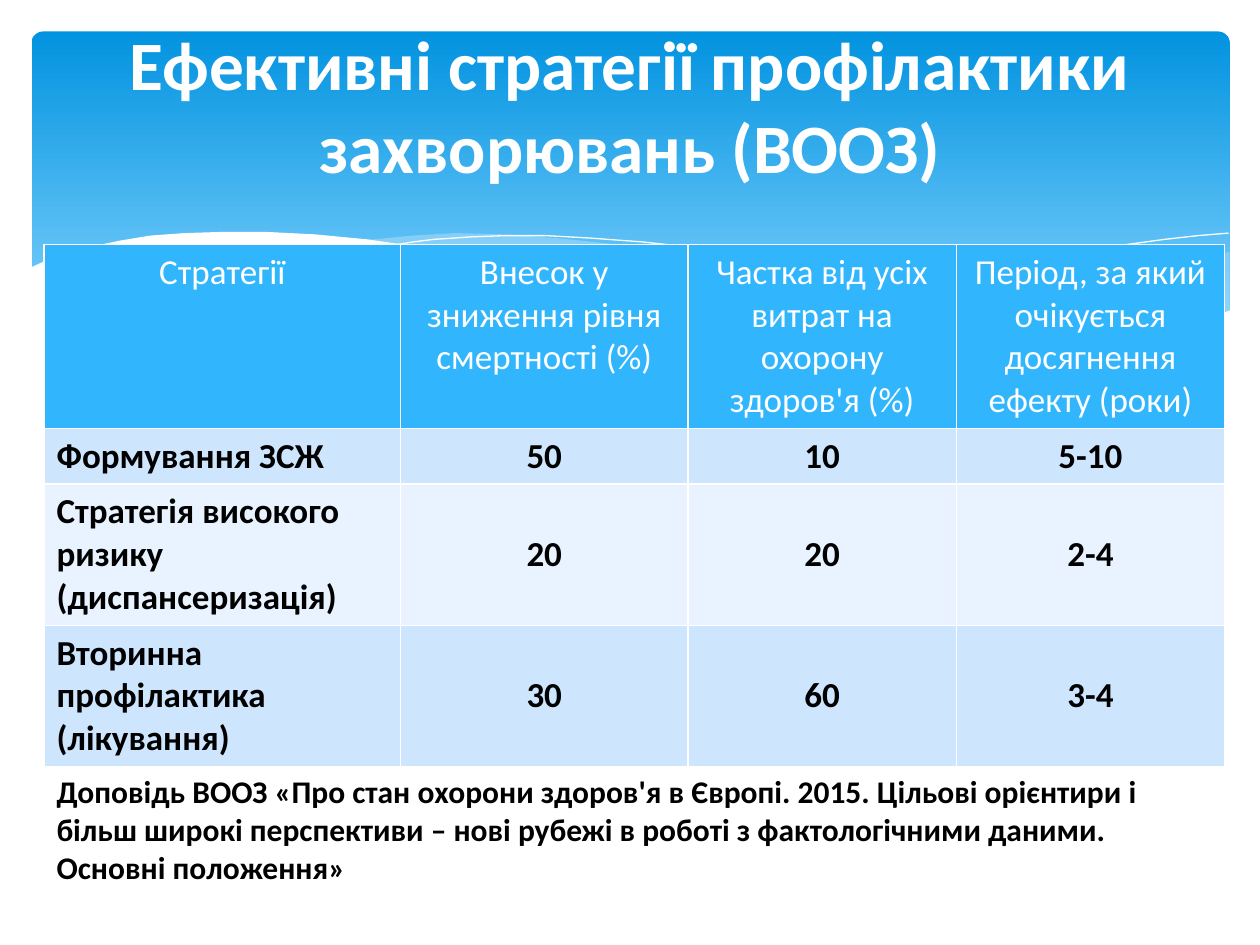
"""Build a slide with a table of disease prevention strategies."""
from dataclasses import dataclass
from typing import Optional

from lxml.etree import SubElement
from pptx import Presentation
from pptx.dml.color import RGBColor
from pptx.enum.shapes import MSO_SHAPE
from pptx.enum.text import MSO_ANCHOR, MSO_AUTO_SIZE, PP_ALIGN
from pptx.oxml.ns import qn
from pptx.util import Inches, Pt

FONT = "Calibri"
WHITE = RGBColor(0xFF, 0xFF, 0xFF)
BLACK = RGBColor(0x00, 0x00, 0x00)
BANNER_TOP = RGBColor(0x02, 0x93, 0xE0)
BANNER_BOTTOM = RGBColor(0x83, 0xD3, 0xFE)
WAVE_BLUE = RGBColor(0xC6, 0xE7, 0xFC)
HEADER_BLUE = RGBColor(0x31, 0xB6, 0xFD)
BAND_DARK = RGBColor(0xCE, 0xE5, 0xFE)
BAND_LIGHT = RGBColor(0xE8, 0xF3, 0xFF)


@dataclass
class Wave:
    """A wave outline, either filled or drawn as a hairline."""
    points: list[tuple[float, float]]
    fill: Optional[RGBColor] = None
    alpha: int = 100


@dataclass
class Row:
    """A table row with its height, band colour and cell texts."""
    height: float
    fill: RGBColor
    texts: tuple[str, ...]


WAVES = [
    Wave([(9.76, 2), (9.62, 2.02), (9.35, 2.07), (9.06, 2.13), (8.61, 2.23),
          (8.05, 2.37), (7.53, 2.48), (7.06, 2.57), (6.61, 2.65), (6.91, 2.69),
          (7.19, 2.72), (7.45, 2.75), (7.69, 2.77), (8.03, 2.78), (8.35, 2.77),
          (8.63, 2.75), (8.89, 2.72), (9.13, 2.67), (9.35, 2.62), (9.49, 2.57),
          (9.76, 2.47)], WAVE_BLUE, 29),
    Wave([(8.93, 2.73), (8.66, 2.69), (8.07, 2.6), (7.41, 2.47), (6.68, 2.31),
          (6.29, 2.22), (5.98, 2.14), (5.69, 2.08), (5.41, 2.03), (5.14, 1.98),
          (4.89, 1.94), (4.42, 1.89), (3.99, 1.86), (3.61, 1.85), (3.28, 1.87),
          (2.86, 1.91), (3.23, 1.96), (3.62, 2.03), (4.04, 2.11), (4.49, 2.22),
          (5.3, 2.4), (5.84, 2.52), (6.34, 2.61), (6.8, 2.68), (7.22, 2.74),
          (7.61, 2.77), (7.96, 2.78), (8.28, 2.78), (8.57, 2.77), (8.76, 2.75)],
         WAVE_BLUE, 40),
    Wave([(3.09, 1.95), (3.28, 1.92), (3.44, 1.9), (3.74, 1.88), (4.01, 1.87),
          (4.33, 1.87), (4.69, 1.89), (5.1, 1.92), (5.56, 1.97), (6.08, 2.04),
          (6.65, 2.13), (7.27, 2.26), (7.95, 2.41), (8.69, 2.61), (9.07, 2.72)]),
    Wave([(6.13, 2.57), (6.53, 2.46), (6.95, 2.35), (7.48, 2.23), (8.06, 2.1),
          (8.66, 1.99), (8.95, 1.94), (9.24, 1.9), (9.51, 1.87), (9.75, 1.85)]),
    Wave([(9.77, 2.46), (9.59, 2.53), (9.4, 2.59), (9.2, 2.65), (8.99, 2.69),
          (8.75, 2.73), (8.5, 2.75), (8.23, 2.77), (7.93, 2.76), (7.61, 2.75),
          (7.26, 2.72), (6.88, 2.68), (6.48, 2.62), (6.03, 2.54), (5.55, 2.45),
          (5.03, 2.33), (4.47, 2.2), (3.91, 2.07), (3.4, 1.97), (2.92, 1.9),
          (2.5, 1.86), (2.11, 1.84), (1.77, 1.84), (1.46, 1.85), (1.19, 1.87),
          (0.95, 1.91), (0.76, 1.95), (0.59, 1.99), (0.46, 2.03), (0.36, 2.07),
          (0.23, 2.13), (0.23, 3.29), (9.77, 3.29)], WHITE),
]
COLUMNS = (2.83, 2.28, 2.13, 2.13)
ROWS = [
    Row(1.46, HEADER_BLUE, ("Стратегії", "Внесок у зниження рівня смертності (%)",
                            "Частка від усіх витрат на охорону здоров'я (%)",
                            "Період, за який очікується досягнення ефекту (роки)")),
    Row(0.44, BAND_DARK, ("Формування ЗСЖ", "50", "10", "5-10")),
    Row(1.12, BAND_LIGHT, ("Стратегія високого ризику (диспансеризація)",
                           "20", "20", "2-4")),
    Row(1.12, BAND_DARK, ("Вторинна профілактика (лікування)", "30", "60", "3-4")),
]
TITLE = "Ефективні стратегії профілактики захворювань (ВООЗ)"
SOURCE = ("Доповідь ВООЗ «Про стан охорони здоров'я в Європі. 2015. Цільові орієнтири "
          "і більш широкі перспективи – нові рубежі в роботі з фактологічними даними. "
          "Основні положення»")


def write(tf, text: str, size: float, color: RGBColor, bold: bool, align) -> None:
    """Write one formatted run into the first paragraph of a text frame."""
    p = tf.paragraphs[0]
    p.alignment = align
    r = p.add_run()
    r.text = text
    r.font.name = FONT
    r.font.size = Pt(size)
    r.font.bold = bold
    r.font.color.rgb = color


def draw_banner(s) -> None:
    """Draw the rounded gradient banner."""
    sp = s.shapes.add_shape(MSO_SHAPE.ROUNDED_RECTANGLE, Inches(0.25), Inches(0.25),
                            Inches(9.51), Inches(2.7))
    sp.adjustments[0] = 0.034
    sp.shadow.inherit = False
    sp.line.fill.background()
    sp.fill.gradient()
    sp.fill.gradient_angle = 270
    stops = ((0, BANNER_TOP), (0.9, BANNER_BOTTOM))
    for stop, (position, color) in zip(sp.fill.gradient_stops, stops):
        stop.position = position
        stop.color.rgb = color


def draw_wave(s, wave: Wave) -> None:
    """Draw one wave as a filled area or an open hairline."""
    points = [(Inches(x), Inches(y)) for x, y in wave.points]
    builder = s.shapes.build_freeform(*points[0])
    builder.add_line_segments(points[1:], close=wave.fill is not None)
    sp = builder.convert_to_shape()
    sp.shadow.inherit = False
    if wave.fill is None:
        sp.fill.background()
        sp.line.color.rgb = WHITE
        sp.line.width = Pt(0)
        return
    sp.line.fill.background()
    sp.fill.solid()
    sp.fill.fore_color.rgb = wave.fill
    if wave.alpha < 100:
        color = sp.element.spPr.find(qn("a:solidFill"))[0]
        SubElement(color, qn("a:alpha"), val=str(wave.alpha * 1000))


def set_borders(cell) -> None:
    """Give a cell white one-point borders."""
    tc_pr = cell._tc.get_or_add_tcPr()
    for side in ("lnL", "lnR", "lnT", "lnB"):
        ln = SubElement(tc_pr, qn(f"a:{side}"), w=str(Pt(1)))
        fill = SubElement(ln, qn("a:solidFill"))
        SubElement(fill, qn("a:srgbClr"), val=str(WHITE))


def draw_table(s) -> None:
    """Draw the table of strategies."""
    table = s.shapes.add_table(len(ROWS), len(COLUMNS), Inches(0.35), Inches(1.94),
                               Inches(sum(COLUMNS)),
                               Inches(sum(row.height for row in ROWS))).table
    for column, width in zip(table.columns, COLUMNS):
        column.width = Inches(width)
    for i, row in enumerate(ROWS):
        table.rows[i].height = Inches(row.height)
        header = i == 0
        for j, text in enumerate(row.texts):
            cell = table.cell(i, j)
            set_borders(cell)
            cell.fill.solid()
            cell.fill.fore_color.rgb = row.fill
            cell.vertical_anchor = MSO_ANCHOR.TOP if header else MSO_ANCHOR.MIDDLE
            align = PP_ALIGN.CENTER if header or j else PP_ALIGN.LEFT
            write(cell.text_frame, text, 20, WHITE if header else BLACK,
                  not header, align)


def place_title(s) -> None:
    """Format the title placeholder and bring it above the banner."""
    title = s.shapes.title
    title.left, title.top = Inches(0.5), Inches(0.6)
    title.width, title.height = Inches(9), Inches(1.1)
    tf = title.text_frame
    tf.word_wrap = True
    tf.auto_size = MSO_AUTO_SIZE.NONE
    tf.vertical_anchor = MSO_ANCHOR.MIDDLE
    tf.margin_bottom = Inches(0.7)
    write(tf, TITLE, 39.6, WHITE, True, PP_ALIGN.CENTER)
    title.element.getparent().append(title.element)


def main() -> None:
    """Assemble and save the slide."""
    prs = Presentation()
    prs.slide_width, prs.slide_height = Inches(10), Inches(7.5)
    s = prs.slides.add_slide(prs.slide_layouts[5])
    draw_banner(s)
    for wave in WAVES:
        draw_wave(s, wave)
    place_title(s)
    draw_table(s)
    tf = s.shapes.add_textbox(Inches(0.35), Inches(6.08), Inches(9.29),
                              Inches(1.01)).text_frame
    tf.word_wrap = True
    write(tf, SOURCE, 18, BLACK, True, PP_ALIGN.LEFT)
    prs.save("out.pptx")


if __name__ == "__main__":
    main()
